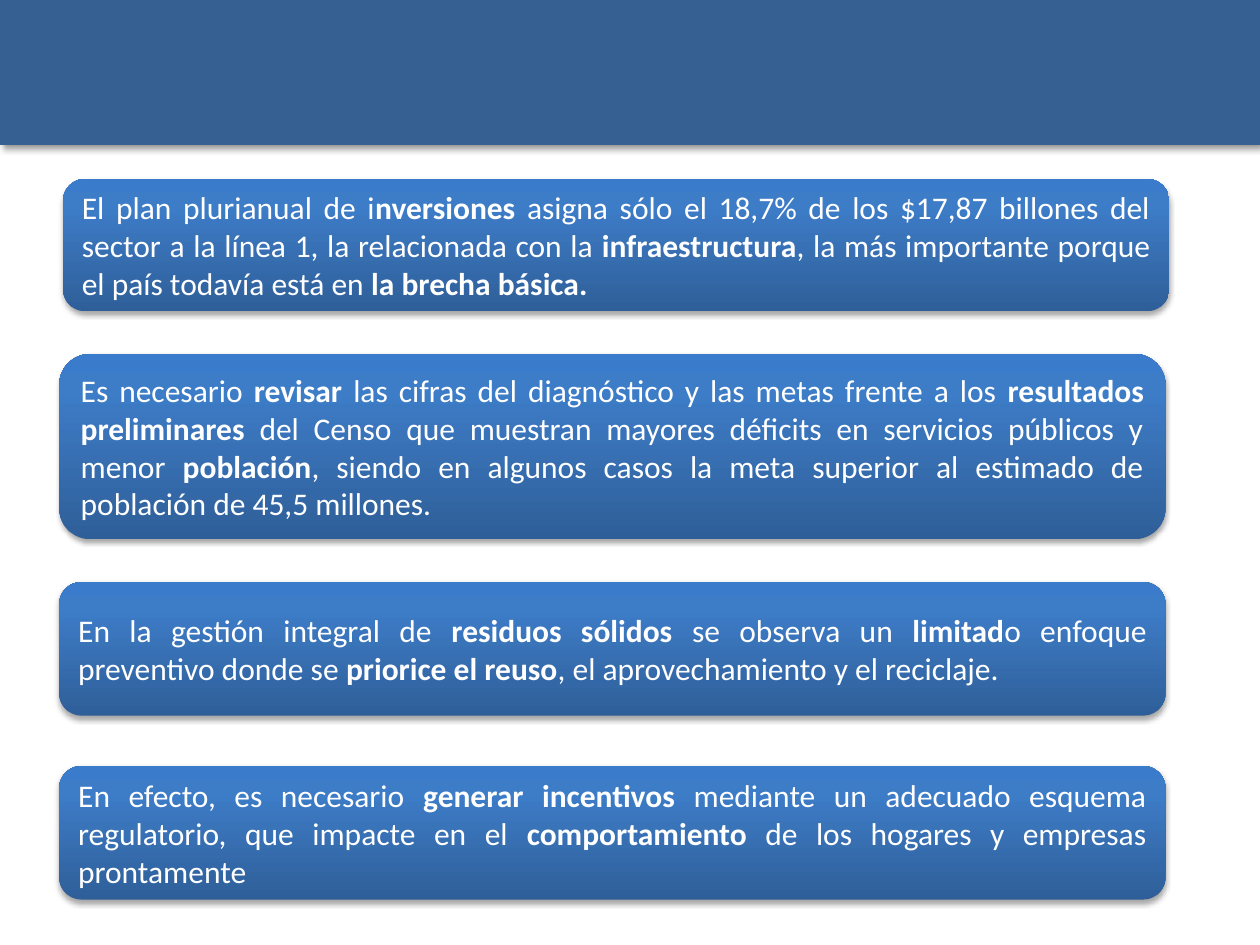
from lxml.etree import SubElement
from copy import deepcopy
from itertools import cycle
from pptx import Presentation
from pptx.dml.color import RGBColor
from pptx.enum.shapes import MSO_SHAPE
from pptx.enum.text import MSO_ANCHOR, PP_ALIGN
from pptx.oxml.ns import qn
from pptx.util import Inches, Pt

COLORS = {
    "band": "376092",
    "card_bottom": "2F5F99",
    "card_middle": "3D7CC7",
    "card_top": "3A7CCB",
    "text": "FFFFFF",
    "shadow": "000000",
}
COLUMNS, ROWS = 100, 75
CELL = Inches(0.1)
CARD_LEFT, CARD_WIDTH = 4.7, 87.8

CARDS = [
    ((5, 14.2, CARD_WIDTH, 10.5), [
        "El plan plurianual de i", "nversiones",
        " asigna sólo el 18,7% de los $17,87 billones del sector a la línea 1, la relacionada con la ",
        "infraestructura",
        ", la más importante porque el país todavía está en ", "la brecha básica.",
    ]),
    ((CARD_LEFT, 28.1, CARD_WIDTH, 14.7), [
        "Es necesario", " revisar ",
        "las cifras del diagnóstico y las metas frente a los ", "resultados preliminares",
        " del Censo que muestran mayores déficits en servicios públicos y menor ", "población",
        ", siendo en algunos casos la meta superior al estimado de población de 45,5 millones.",
    ]),
    ((CARD_LEFT, 46.2, CARD_WIDTH, 10.6), [
        "En la gestión integral de ", "residuos sólidos ", "se observa un ", "limitad",
        "o enfoque preventivo donde se ", "priorice el reuso",
        ", el aprovechamiento y el reciclaje. ",
    ]),
    ((CARD_LEFT, 60.8, CARD_WIDTH, 10.6), [
        "En efecto, es necesario ", "generar incentivos ",
        "mediante un adecuado esquema regulatorio, que impacte en el ", "comportamiento",
        " de los hogares y empresas prontamente",
    ]),
]


def rgb(name):
    """Return the palette colour with this name."""
    return RGBColor.from_string(COLORS[name])


def add_block(slide, kind, box):
    """Add an outline-free shape on the grid."""
    block = slide.shapes.add_shape(kind, *(round(cells * CELL) for cells in box))
    block.line.fill.background()
    return block


def cast_shadow(block, opacity, blur, distance, angle):
    """Give a shape an outer shadow."""
    block.shadow.inherit = False
    effects = block.element.spPr.find(qn("a:effectLst"))
    shadow = SubElement(effects, qn("a:outerShdw"), blurRad=str(Pt(blur)),
                        dist=str(Pt(distance)), dir=str(angle * 60000), rotWithShape="0")
    tint = SubElement(shadow, qn("a:srgbClr"), val=COLORS["shadow"])
    SubElement(tint, qn("a:alpha"), val=str(opacity * 1000))


def shade(block):
    """Fill a shape with the three-stop card gradient, dark at the bottom."""
    block.fill.gradient()
    block.fill.gradient_angle = 90
    stop_list = block.element.spPr.find(".//" + qn("a:gsLst"))
    stop_list.append(deepcopy(stop_list[-1]))
    levels = [(0, "card_bottom"), (0.8, "card_middle"), (1, "card_top")]
    for stop, (position, name) in zip(block.fill.gradient_stops, levels):
        stop.position = position
        stop.color.rgb = rgb(name)


def add_header(slide, box):
    """Draw the plain header band."""
    band = add_block(slide, MSO_SHAPE.RECTANGLE, box)
    band.fill.solid()
    band.fill.fore_color.rgb = rgb("band")
    cast_shadow(band, 40, 4, 3, 45)


def add_card(slide, box, phrases):
    """Draw a rounded card whose phrases alternate regular and bold."""
    card = add_block(slide, MSO_SHAPE.ROUNDED_RECTANGLE, box)
    shade(card)
    cast_shadow(card, 35, 3.1, 1.8, 90)
    frame = card.text_frame
    frame.word_wrap = True
    frame.vertical_anchor = MSO_ANCHOR.MIDDLE
    statement = frame.paragraphs[0]
    statement.alignment = PP_ALIGN.JUSTIFY
    for phrase, bold in zip(phrases, cycle([False, True])):
        run = statement.add_run()
        run.text = phrase
        run.font.name = "Calibri"
        run.font.size = Pt(18)
        run.font.bold = bold
        run.font.color.rgb = rgb("text")


def main():
    """Build and save the slide."""
    deck = Presentation()
    deck.slide_width, deck.slide_height = COLUMNS * CELL, ROWS * CELL
    slide = deck.slides.add_slide(deck.slide_layouts[6])
    add_header(slide, (0, 0, COLUMNS, 11.5))
    for box, phrases in CARDS:
        add_card(slide, box, phrases)
    deck.save("out.pptx")


if __name__ == "__main__":
    main()
